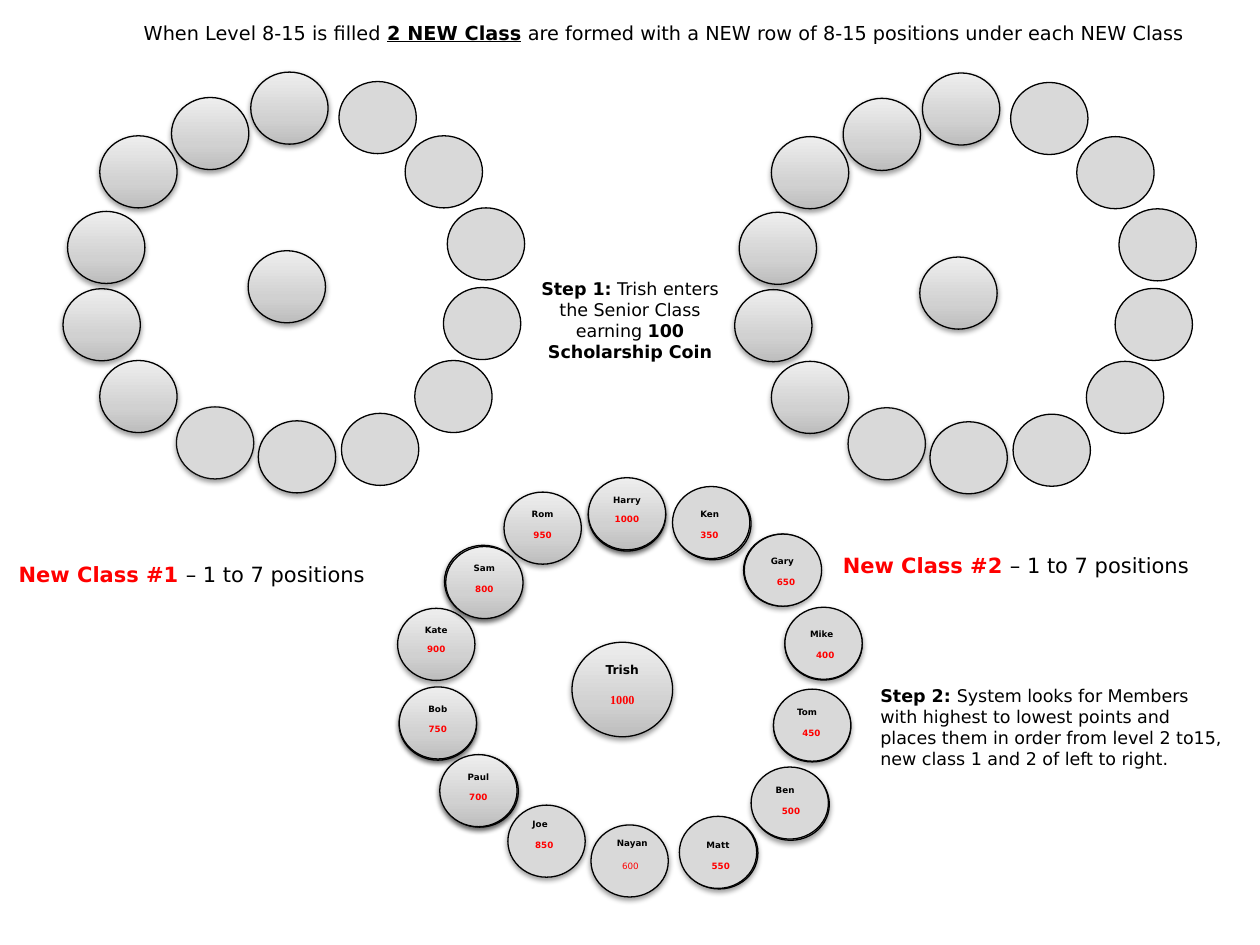
from collections import namedtuple

from pptx import Presentation
from pptx import util as u
from pptx.dml.color import RGBColor
from pptx.enum import shapes, text
from pptx.oxml import parse_xml
from pptx.oxml.ns import nsdecls, qn

BLACK = RGBColor(0x00, 0x00, 0x00)
NEAR_BLACK = RGBColor(0x0D, 0x0D, 0x0D)
RED = RGBColor(0xFF, 0x00, 0x00)
GREY = RGBColor(0xD9, 0xD9, 0xD9)
SHADES = (
    (0, RGBColor(0xBD, 0xBD, 0xBD)),
    (35, RGBColor(0xD1, 0xD1, 0xD1)),
    (100, RGBColor(0xEE, 0xEE, 0xEE)),
)
FONT = "DejaVu Sans"
SERIF = "Times New Roman"
SEAT_SIZE = (44.2, 41.2)
LEADER_SIZE = (57.5, 54)

SHADED_SEATS = [(36, 165), (57, 206), (57, 77.6), (143.3, 41.2), (98, 55.7), (38.6, 120.8)]
PLAIN_SEATS = [(193.7, 46.6), (231.5, 77.6), (253.4, 164.3), (237, 206),
               (195.1, 236.2), (255.6, 118.8)]
RAISED_SEATS = [(100.8, 232.5), (147.6, 240.5)]

Member = namedtuple("Member", "name points left top backing gap")
SHADED_MEMBERS = [
    Member("Rom", "950", 288, 281.2, None, 5.8),
    Member("Harry", "1000", 336.2, 273, (0, 0.7), 5),
    Member("Kate", "900", 227.2, 347.6, None, 5),
    Member("Sam", "800", 254.7, 312.3, (-0.7, -0.7), 5.8),
    Member("Bob", "750", 228.1, 392.5, (0, 0.7), 5.8),
    Member("Paul", "700", 251.3, 431.2, (0.7, 0.3), 5.8),
]

Label = namedtuple("Label", "left top name_indent points_indent bold")
PLAIN_MEMBERS = [
    (Member("Joe", "850", 290.2, 460.1, None, 6), Label(295.2, 464.6, 2, 3.5, True)),
    (Member("Gary", "650", 425.3, 305.2, (-0.4, 0), 6), Label(433.4, 313.9, 0, 3.5, True)),
    (Member("Nayan", "600", 337.7, 471.4, None, 7), Label(343.4, 475.4, 2, 5, False)),
    (Member("Matt", "550", 388.2, 466.5, (0.7, 0.3), 6), Label(394.6, 476.1, 2, 5, True)),
    (Member("Ben", "500", 429.2, 438.3, (0.5, 0.7), 6), Label(434.2, 445.1, 2, 5.5, True)),
    (Member("Tom", "450", 442, 393.8, (0, 0.4), 6), Label(446.4, 400.5, 2, 5, True)),
    (Member("Mike", "400", 448.5, 347, (0, 0.4), 6), Label(455.8, 355.7, 0, 3.5, True)),
    (Member("Ken", "350", 384.3, 278, (0.7, 0.7), 6), Label(393.1, 287.3, 0, 0, True)),
]


def add_circle(holder, left, top, shaded=False, raised=False, line=BLACK, size=SEAT_SIZE):
    circle = holder.add_shape(shapes.MSO_SHAPE.OVAL, *map(u.Pt, (left, top, *size)))
    circle.line.color.rgb = line
    circle.line.width = u.Pt(0.75)
    circle.fill.solid()
    circle.fill.fore_color.rgb = GREY
    circle.shadow.inherit = False
    properties = circle._element.spPr
    if shaded:
        stops = "".join(
            f'<a:gs pos="{place * 1000}"><a:srgbClr val="{color}"/></a:gs>'
            for place, color in SHADES)
        gradient = parse_xml(
            f'<a:gradFill {nsdecls("a")} rotWithShape="1"><a:gsLst>{stops}</a:gsLst>'
            '<a:lin ang="16200000" scaled="0"/></a:gradFill>')
        properties.replace(properties.find(qn("a:solidFill")), gradient)
    if raised:
        properties.find(qn("a:effectLst")).append(parse_xml(
            f'<a:outerShdw {nsdecls("a")} blurRad="{u.Pt(3.1)}" dist="{u.Pt(1.6)}" '
            'dir="5400000" rotWithShape="0"><a:srgbClr val="000000">'
            '<a:alpha val="38000"/></a:srgbClr></a:outerShdw>'))
    return circle


def add_span(para, words, size, color=BLACK, bold=False, underline=False, font=FONT):
    span = para.add_run()
    span.text = words
    span.font.name = font
    span.font.size = u.Pt(size)
    span.font.color.rgb = color
    span.font.bold = bold
    span.font.underline = underline


def add_box(holder, left, top, width, height):
    box = holder.add_textbox(*map(u.Pt, (left, top, width, height)))
    box.text_frame.word_wrap = True
    return box


def write_score(frame, member, size=5, bold=True, font=FONT):
    name = frame.paragraphs[0]
    add_span(name, member.name, size, bold=True)
    points = frame.add_paragraph()
    points.space_before = u.Pt(member.gap)
    add_span(points, member.points, size, RED, bold, font=font)
    return name, points


def add_centred_member(page, member, size=SEAT_SIZE, text_size=5, bold=True, font=FONT):
    if member.backing:
        across, down = member.backing
        add_circle(page.shapes, member.left + across, member.top + down, True, True)
    circle = add_circle(page.shapes, member.left, member.top, True, True, size=size)
    frame = circle.text_frame
    frame.margin_left = frame.margin_right = 0
    frame.vertical_anchor = text.MSO_ANCHOR.TOP
    for para in write_score(frame, member, text_size, bold, font):
        para.alignment = text.PP_ALIGN.CENTER


def add_labelled_member(page, member, label):
    if member.backing:
        across, down = member.backing
        add_circle(page.shapes, member.left + across, member.top + down, raised=True)
    group = page.shapes.add_group_shape()
    add_circle(group.shapes, member.left, member.top, raised=not member.backing)
    box = add_box(group.shapes, label.left, label.top, 42, 25)
    paras = write_score(box.text_frame, member, bold=label.bold)
    for para, indent in zip(paras, (label.name_indent, label.points_indent)):
        properties = para._p.get_or_add_pPr()
        properties.set("marL", str(u.Pt(indent)))
        properties.set("indent", "0")


def add_empty_class(page, across, down, centre):
    group = page.shapes.add_group_shape()
    for left, top in PLAIN_SEATS:
        add_circle(group.shapes, left + across, top + down)
    for left, top in SHADED_SEATS:
        add_circle(group.shapes, left + across, top + down, True, True)
    for (left, top), line in zip(RAISED_SEATS, (NEAR_BLACK, BLACK)):
        add_circle(group.shapes, left + across, top + down, raised=True, line=line)
    add_circle(page.shapes, *centre, True, True)


def add_title(page):
    title = page.shapes.title
    title.left, title.top, title.width, title.height = map(u.Pt, (57, 5.8, 645, 23))
    frame = title.text_frame
    frame.word_wrap = True
    frame.auto_size = text.MSO_AUTO_SIZE.NONE
    frame.vertical_anchor = text.MSO_ANCHOR.TOP
    para = frame.paragraphs[0]
    para.alignment = text.PP_ALIGN.CENTER
    para.line_spacing = 1.2
    para.space_before = u.Pt(0)
    add_span(para, "When Level 8-15 is filled ", 11)
    add_span(para, "2 NEW Class", 11, bold=True, underline=True)
    add_span(para, " are formed with a NEW row of 8-15 positions under each NEW Class", 11)


def add_class_heading(page, name, left, top):
    para = add_box(page.shapes, left, top, 242, 22).text_frame.paragraphs[0]
    add_span(para, name, 12, RED, True)
    add_span(para, "– 1 to 7 positions", 12)


def add_step(page, bounds, spans, alignment):
    para = add_box(page.shapes, *bounds).text_frame.paragraphs[0]
    para.alignment = alignment
    for words, bold in spans:
        add_span(para, words, 10, bold=bold)


def main():
    deck = Presentation()
    deck.slide_width, deck.slide_height = u.Pt(720), u.Pt(540)
    page = deck.slides.add_slide(deck.slide_layouts[5])
    add_title(page)
    add_empty_class(page, 0, 0, (141.8, 143.3))
    add_empty_class(page, 383.8, 0.5, (525.6, 146.9))
    add_class_heading(page, "New Class #1 ", 3.6, 317.5)
    add_class_heading(page, "New Class #2 ", 474.5, 312.5)
    add_step(page, (298, 155.5, 124, 55),
             [("Step 1:", True), (" Trish enters the Senior Class earning ", False),
              ("100 Scholarship Coin", True)], text.PP_ALIGN.CENTER)
    add_step(page, (496, 388, 214, 55),
             [("Step 2: ", True),
              ("System looks for Members with highest to lowest points and places them in "
               "order from level 2 to15, new class 1 and 2 of left to right.", False)],
             text.PP_ALIGN.LEFT)
    add_centred_member(page, Member("Trish", "1000", 326.9, 367, None, 8.5),
                       LEADER_SIZE, 7, font=SERIF)
    for member in SHADED_MEMBERS:
        add_centred_member(page, member)
    for member, label in PLAIN_MEMBERS:
        add_labelled_member(page, member, label)
    deck.save("out.pptx")


if __name__ == "__main__":
    main()
